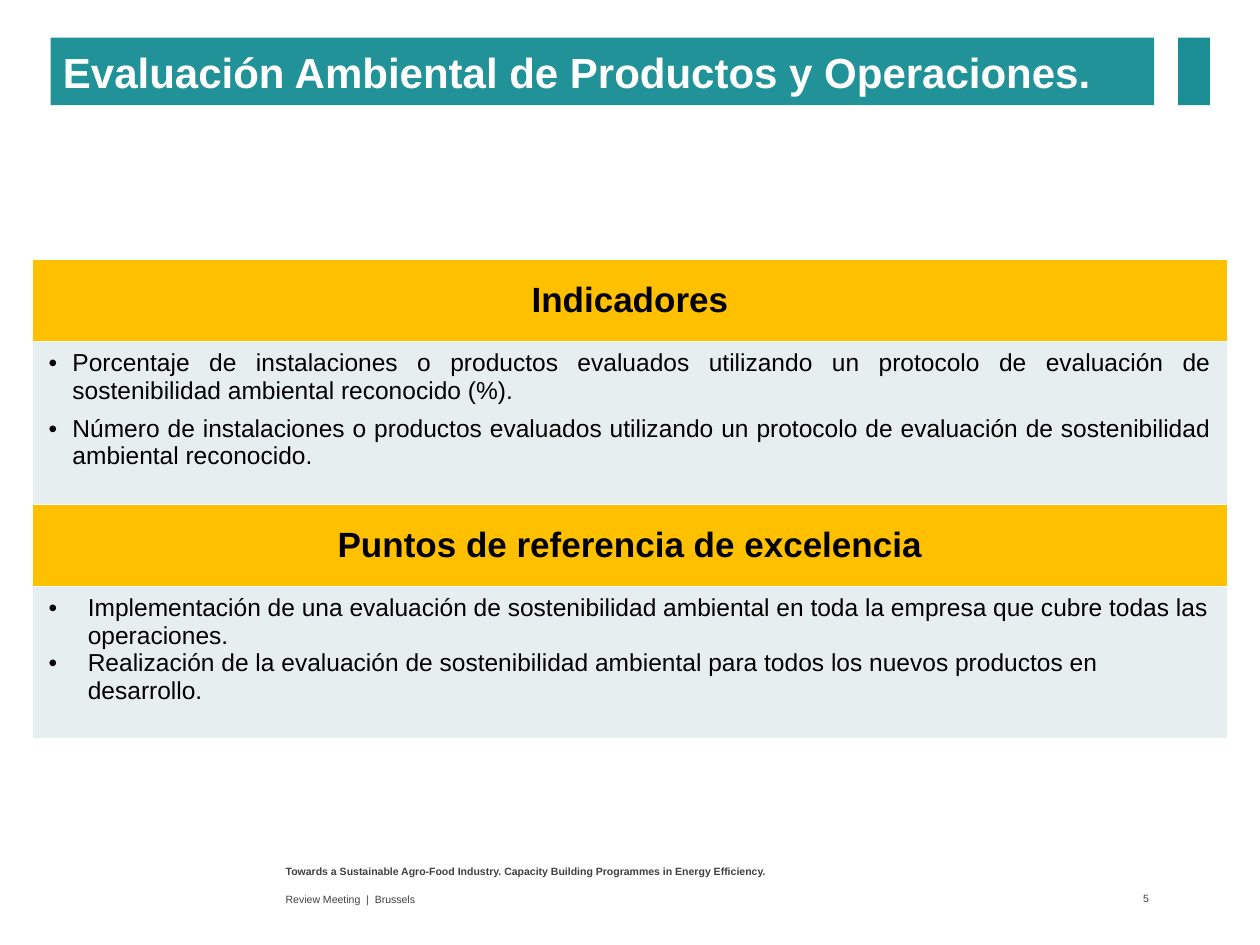
from lxml.etree import SubElement
from pptx import Presentation
from pptx.dml.color import RGBColor
from pptx.enum.shapes import MSO_SHAPE
from pptx.enum.text import MSO_ANCHOR, PP_ALIGN
from pptx.oxml.ns import qn
from pptx.util import Cm, Pt

WHITE = RGBColor(0xFF, 0xFF, 0xFF)
BLACK = RGBColor(0x00, 0x00, 0x00)
GREY = RGBColor(0x40, 0x40, 0x40)
TEAL = RGBColor(0x20, 0x92, 0x98)
DARK_TEAL = RGBColor(0x1B, 0x8E, 0x95)
AMBER = RGBColor(0xFF, 0xC0, 0x00)
PALE = RGBColor(0xE7, 0xEE, 0xEF)

TABLE_LEFT, TABLE_WIDTH, HEADER_HEIGHT = Cm(0.66), Cm(24.08), Cm(1.65)
INDICATORS = [
    "Porcentaje de instalaciones o productos evaluados utilizando un protocolo "
    "de evaluación de sostenibilidad ambiental reconocido (%).",
    "Número de instalaciones o productos evaluados utilizando un protocolo "
    "de evaluación de sostenibilidad ambiental reconocido.",
]
BENCHMARKS = [
    "Implementación de una evaluación de sostenibilidad ambiental en toda la "
    "empresa que cubre todas las operaciones.",
    "Realización de la evaluación de sostenibilidad ambiental para todos los "
    "nuevos productos en desarrollo.",
]


def set_values(target, values):
    for name, value in values.items():
        setattr(target, name, value)


def write(paragraph, text, size, color, bold=False, align=PP_ALIGN.LEFT):
    paragraph.alignment = align
    run = paragraph.add_run()
    run.text = text
    set_values(run.font, {"name": "Arial", "size": Pt(size), "bold": bold})
    run.font.color.rgb = color


def add_label(slide, box, text, bold=False, align=PP_ALIGN.LEFT,
              anchor=MSO_ANCHOR.MIDDLE, margin_right=Cm(0.25)):
    frame = slide.shapes.add_textbox(*map(Cm, box)).text_frame
    set_values(frame, {"word_wrap": True, "vertical_anchor": anchor,
                       "margin_right": margin_right})
    write(frame.paragraphs[0], text, 6, GREY, bold, align)


def add_bar(slide, left, width, color):
    shape = slide.shapes.add_shape(
        MSO_SHAPE.RECTANGLE, Cm(left), Cm(0.76), Cm(width), Cm(1.36))
    shape.shadow.inherit = False
    shape.fill.solid()
    shape.fill.fore_color.rgb = color
    shape.line.fill.background()
    return shape


def add_bullet(paragraph, indent):
    properties = paragraph._p.get_or_add_pPr()
    properties.set("marL", str(indent))
    properties.set("indent", str(-indent))
    SubElement(properties, qn("a:buFont"), typeface="Arial")
    SubElement(properties, qn("a:buChar"), char="•")


def style_cell(cell, color, anchor, side_margin, edge_margin):
    properties = cell._tc.get_or_add_tcPr()
    for side in ("lnL", "lnR", "lnT", "lnB"):
        line = SubElement(properties, qn(f"a:{side}"), w=str(Pt(1)))
        fill = SubElement(line, qn("a:solidFill"))
        SubElement(fill, qn("a:srgbClr"), val=str(WHITE))
    cell.fill.solid()
    cell.fill.fore_color.rgb = color
    set_values(cell, {
        "vertical_anchor": anchor,
        "margin_left": side_margin, "margin_right": side_margin,
        "margin_top": edge_margin, "margin_bottom": edge_margin,
    })


def add_section(slide, top, body_height, heading, items, indent, align, space_after):
    table = slide.shapes.add_table(
        2, 1, TABLE_LEFT, Cm(top), TABLE_WIDTH, HEADER_HEIGHT + Cm(body_height)).table
    table.rows[0].height = HEADER_HEIGHT
    table.rows[1].height = Cm(body_height)
    header, body = table.cell(0, 0), table.cell(1, 0)
    style_cell(header, AMBER, MSO_ANCHOR.MIDDLE, Cm(0.25), Cm(0.13))
    write(header.text_frame.paragraphs[0], heading, 20, BLACK, True, PP_ALIGN.CENTER)
    style_cell(body, PALE, MSO_ANCHOR.TOP, Cm(0.32), Cm(0.16))
    frame = body.text_frame
    for index, item in enumerate(items):
        paragraph = frame.add_paragraph() if index else frame.paragraphs[0]
        paragraph.space_after = Pt(space_after)
        add_bullet(paragraph, Cm(indent))
        write(paragraph, item, 14, BLACK, align=align)


def main():
    presentation = Presentation()
    set_values(presentation, {"slide_width": Cm(25.4), "slide_height": Cm(19.05)})
    slide = presentation.slides.add_slide(presentation.slide_layouts[6])

    add_label(slide, (5.51, 17.32, 13.97, 0.53),
              "Towards a Sustainable Agro-Food Industry. "
              "Capacity Building Programmes in Energy Efficiency.",
              bold=True, anchor=MSO_ANCHOR.TOP)
    add_label(slide, (5.51, 17.88, 13.97, 0.48), "Review Meeting  |  Brussels")
    add_label(slide, (21.84, 17.86, 1.42, 0.51), "5",
              align=PP_ALIGN.RIGHT, margin_right=Cm(0.1))

    title = add_bar(slide, 1.02, 22.25, TEAL).text_frame
    set_values(title, {"word_wrap": True, "vertical_anchor": MSO_ANCHOR.MIDDLE})
    write(title.paragraphs[0], "Evaluación Ambiental de Productos y Operaciones.",
          24, WHITE, True)
    add_bar(slide, 23.75, 0.64, DARK_TEAL)

    add_section(slide, 5.23, 3.3, "Indicadores", INDICATORS,
                0.48, PP_ALIGN.JUSTIFY, 6)
    add_section(slide, 10.17, 3.08, "Puntos de referencia de excelencia", BENCHMARKS,
                0.79, PP_ALIGN.LEFT, 0)
    presentation.save("out.pptx")


if __name__ == "__main__":
    main()
